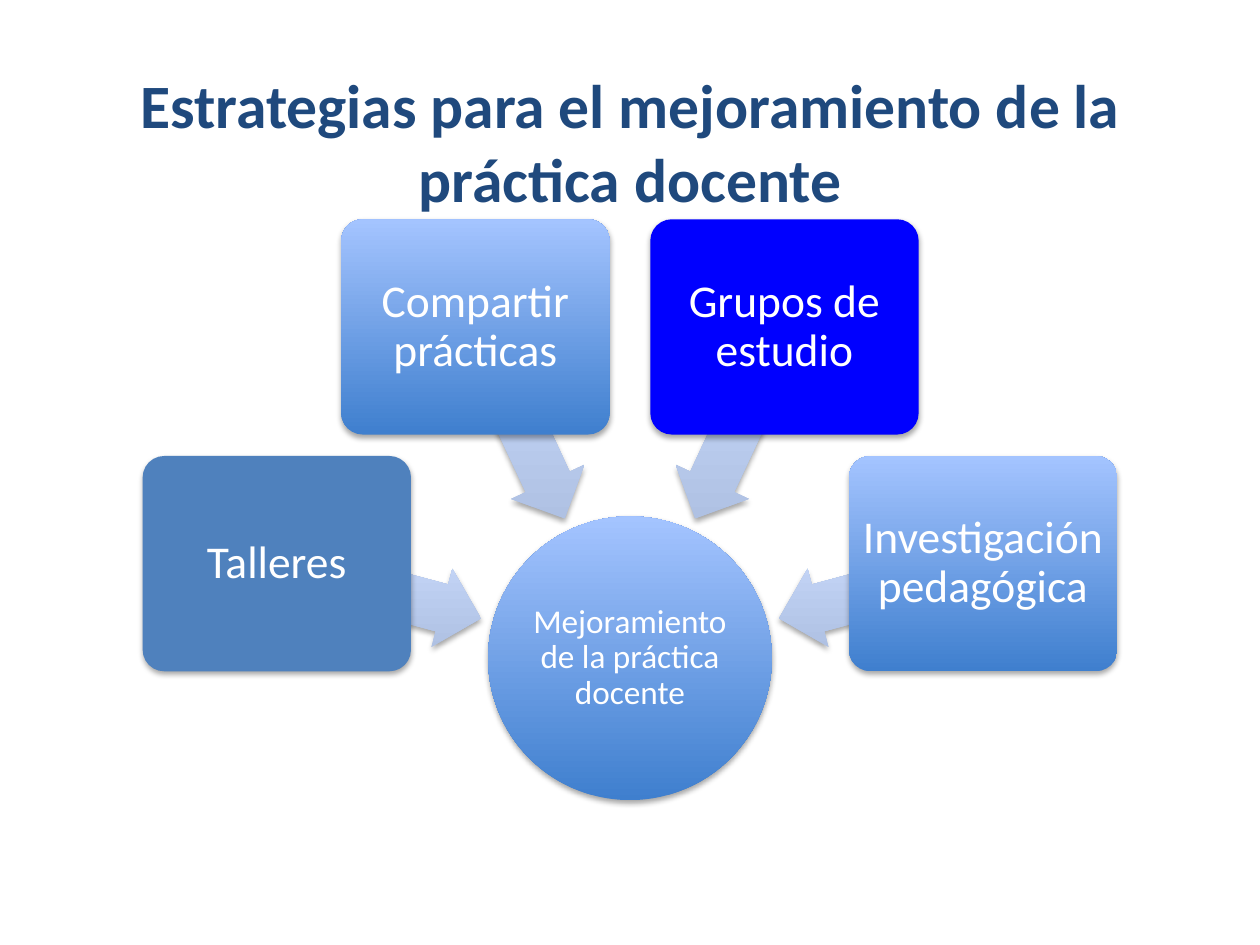
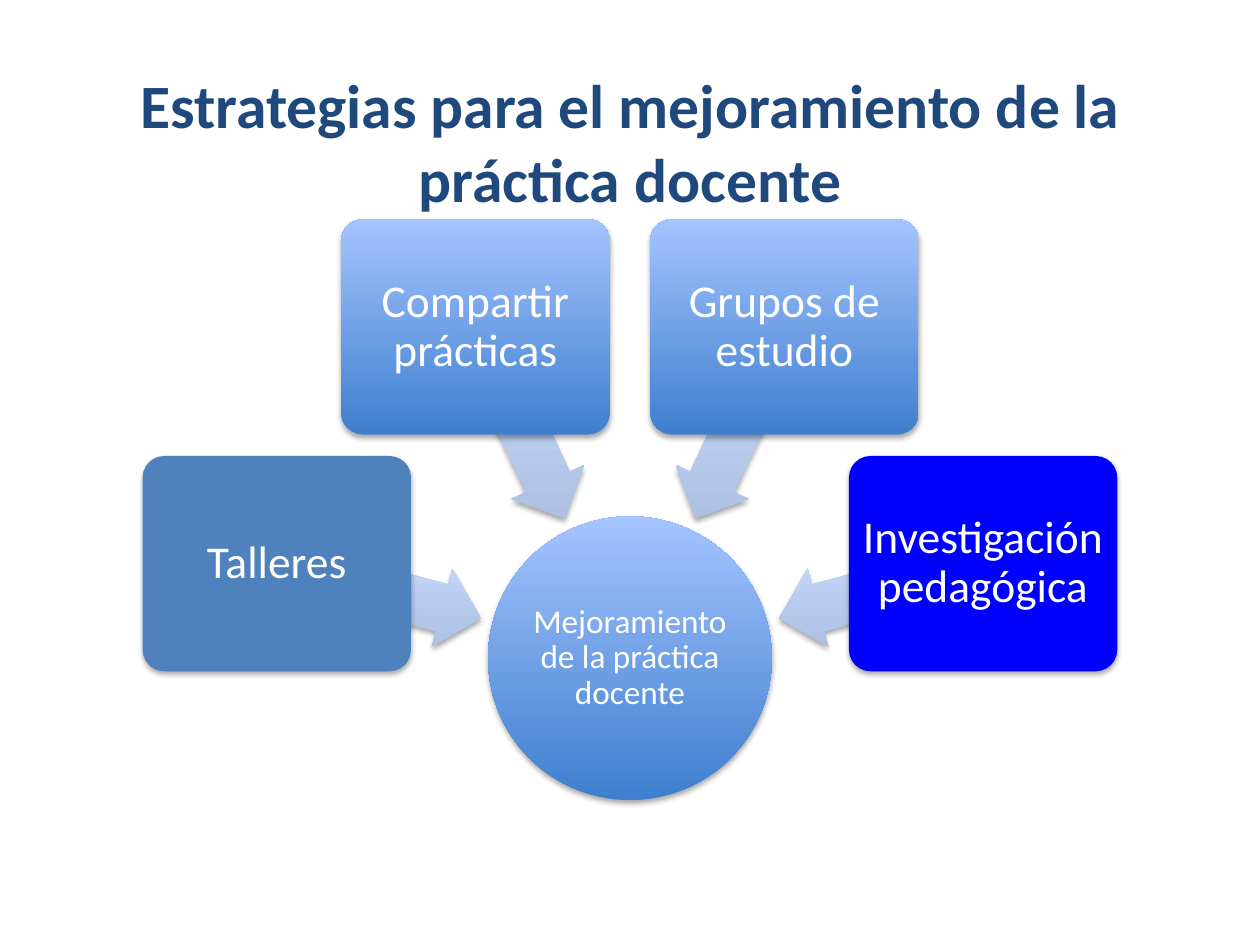
import math

from lxml import etree
from pptx import Presentation
from pptx import util as u
from pptx.dml.color import RGBColor
from pptx.enum import shapes, text
from pptx.oxml.ns import qn

FONT = "Calibri"
TITLE = "Estrategias para el mejoramiento de la práctica docente"
GOAL = "Mejoramiento de la práctica docente"
STRATEGIES = [
    ("Talleres", 195),
    ("Compartir prácticas", 245),
    ("Grupos de estudio", 295),
    ("Investigación pedagógica", 345),
]
HIGHLIGHTS = ["Grupos de estudio", "Investigación pedagógica"]

NAVY, WHITE, BLACK = "1F497D", "FFFFFF", "000000"
STEEL, BRIGHT = "4F81BD", "0000FF"
BLUES = ("3F7FCE", "A4C4FF")
PALE_BLUES = ("ADBFE1", "CCDDFF")

HUB_X, HUB_Y, HUB_SIZE = 12.7, 13.27, 5.72
CARD_RADIUS, CARD_SIZE = 7.37, (5.41, 4.34)
ARROW_RADIUS, ARROW_SIZE = 5.23, (4.24, 1.63)


def color(value):
    return RGBColor.from_string(value)


def write(tf, content, size, ink, bold=False):
    tf.word_wrap = True
    tf.auto_size = text.MSO_AUTO_SIZE.NONE
    tf.vertical_anchor = text.MSO_ANCHOR.MIDDLE
    p = tf.paragraphs[0]
    p.alignment = text.PP_ALIGN.CENTER
    r = p.add_run()
    r.text = content
    r.font.name = FONT
    r.font.size = u.Pt(size)
    r.font.bold = bold
    r.font.color.rgb = color(ink)
    return p


def paint(s, fill):
    if isinstance(fill, str):
        s.fill.solid()
        s.fill.fore_color.rgb = color(fill)
        return
    s.fill.gradient()
    s.fill.gradient_angle = 90
    for stop, value in zip(s.fill.gradient_stops, fill):
        stop.color.rgb = color(value)
    s.element.spPr.find(qn("a:gradFill")).set("rotWithShape", "0")


def add_shadow(s):
    s.shadow.inherit = False
    effects = s.element.spPr.find(qn("a:effectLst"))
    shadow = etree.SubElement(effects, qn("a:outerShdw"), blurRad="40000",
                              dist="23000", dir="5400000", rotWithShape="0")
    shade = etree.SubElement(shadow, qn("a:srgbClr"), val=BLACK)
    etree.SubElement(shade, qn("a:alpha"), val="35000")


def add_figure(slide, kind, center, size, fill):
    (x, y), (w, h) = center, size
    s = slide.shapes.add_shape(kind, u.Cm(x - w / 2), u.Cm(y - h / 2),
                               u.Cm(w), u.Cm(h))
    paint(s, fill)
    s.line.fill.background()
    add_shadow(s)
    return s


def add_label(s, content, size, inset):
    tf = s.text_frame
    tf.margin_left = tf.margin_right = u.Cm(inset)
    tf.margin_top = tf.margin_bottom = u.Cm(inset)
    write(tf, content, size, WHITE).line_spacing = 0.9


def around_hub(radius, angle):
    turn = math.radians(angle)
    return HUB_X + radius * math.cos(turn), HUB_Y + radius * math.sin(turn)


def add_title(slide):
    title = slide.shapes.title
    title.left, title.top = u.Cm(1.27), u.Cm(1.73)
    title.width, title.height = u.Cm(22.86), u.Cm(2.21)
    write(title.text_frame, TITLE, 35.2, NAVY, bold=True)


def add_hub(slide):
    hub = add_figure(slide, shapes.MSO_SHAPE.OVAL, (HUB_X, HUB_Y),
                     (HUB_SIZE, HUB_SIZE), BLUES)
    add_label(hub, GOAL, 19, 0.03)


def add_arrow(slide, angle):
    arrow = add_figure(slide, shapes.MSO_SHAPE.LEFT_ARROW,
                       around_hub(ARROW_RADIUS, angle), ARROW_SIZE, PALE_BLUES)
    arrow.adjustments[0] = 0.6
    arrow.adjustments[1] = 0.5
    arrow.rotation = angle


def add_card(slide, name, angle, fill):
    card = add_figure(slide, shapes.MSO_SHAPE.ROUNDED_RECTANGLE,
                      around_hub(CARD_RADIUS, angle), CARD_SIZE, fill)
    card.adjustments[0] = 0.1
    add_label(card, name, 26, 0.12)


def add_strategy_slide(prs, highlight):
    slide = prs.slides.add_slide(prs.slide_layouts[5])
    add_title(slide)
    add_hub(slide)
    fills = {"Talleres": STEEL, highlight: BRIGHT}
    for name, angle in STRATEGIES:
        add_arrow(slide, angle)
        add_card(slide, name, angle, fills.get(name, BLUES))


def main():
    prs = Presentation()
    prs.slide_width, prs.slide_height = u.Cm(25.4), u.Cm(19.05)
    for highlight in HIGHLIGHTS:
        add_strategy_slide(prs, highlight)
    prs.save("out.pptx")


if __name__ == "__main__":
    main()
